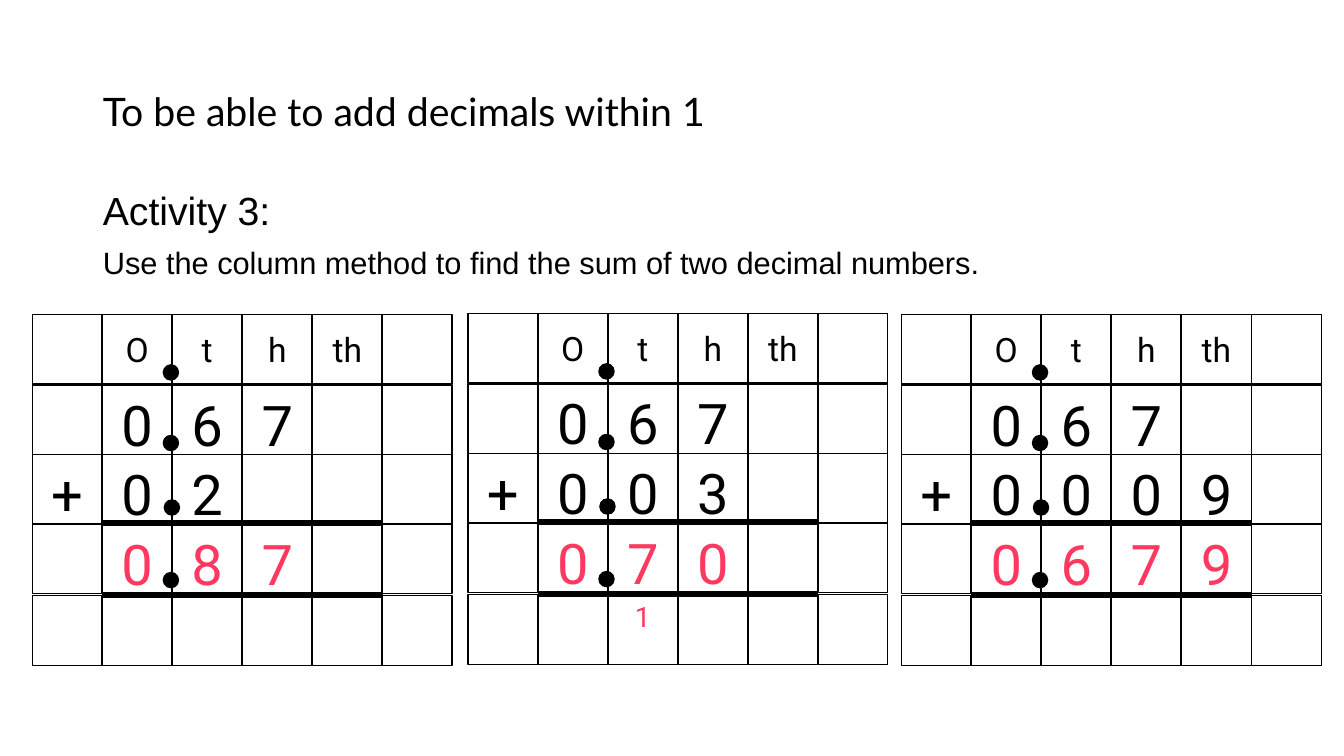
from lxml.etree import SubElement
from pptx import Presentation
from pptx.dml.color import RGBColor
from pptx.enum.shapes import MSO_CONNECTOR, MSO_SHAPE
from pptx.enum.text import MSO_ANCHOR, MSO_AUTO_SIZE, PP_ALIGN
from pptx.oxml.ns import qn
from pptx.util import Inches, Pt

BLACK, WHITE, ANSWER = "000000", "FFFFFF", "FF3860"
CELL = 0.69
COLUMN_STEP = 0.695
ROW_OFFSETS = [0, 0.7, 1.39, 2.08, 2.79]
DOT_OFFSETS = [(1.3, 0.5), (1.3, 1.2), (1.31, 1.84), (1.3, 2.56)]
HEADINGS = ["", "O", "t", "h", "th", ""]

# Left, top, then the rows below the headings, one string per row.
SUMS = [
    (0.32, 3.12, [" 067  ", "+02   ", " 087  ", "      "]),
    (8.94, 3.12, [" 067  ", "+0009 ", " 0679 ", "      "]),
    (4.64, 3.11, [" 067  ", "+003  ", " 070  ", "  1   "]),
]
ROW_STYLES = [(40, BLACK), (40, BLACK), (40, ANSWER), (20, ANSWER)]


def colour(value):
    return RGBColor.from_string(value)


class LessonSlide:
    digit_font = "Roboto"

    def __init__(self, deck):
        self.slide = deck.slides.add_slide(deck.slide_layouts[1])

    def add_text(self, para, text, size, font, shade=BLACK):
        span = para.add_run()
        span.text = text
        span.font.size = Pt(size)
        span.font.name = font
        span.font.color.rgb = colour(shade)

    def place(self, holder, left, top, width, height, anchor):
        holder.left, holder.top = Inches(left), Inches(top)
        holder.width, holder.height = Inches(width), Inches(height)
        frame = holder.text_frame
        frame.auto_size = MSO_AUTO_SIZE.NONE
        frame.word_wrap = True
        frame.vertical_anchor = anchor
        return frame

    def title(self, text):
        frame = self.place(self.slide.shapes.title, 0.92, 0.4, 9.6, 1.45, MSO_ANCHOR.MIDDLE)
        para = frame.paragraphs[0]
        para.alignment = PP_ALIGN.LEFT
        para.line_spacing = 0.9
        self.add_text(para, text, 28, "Lato")

    def body(self, lines):
        frame = self.place(self.slide.placeholders[1], 0.92, 1.85, 11.5, 4.76, MSO_ANCHOR.TOP)
        for index, (text, size) in enumerate(lines):
            para = frame.add_paragraph() if index else frame.paragraphs[0]
            para.line_spacing = 0.9
            para.space_before = Pt(10 if index else 0)
            properties = para._p.get_or_add_pPr()
            properties.set("marL", "0")
            properties.set("indent", "0")
            SubElement(properties, qn("a:buNone"))
            self.add_text(para, text, size, "Arial")

    def shape(self, kind, left, top, size, fill):
        box = self.slide.shapes.add_shape(
            kind, Inches(left), Inches(top), Inches(size), Inches(size))
        box.shadow.inherit = False
        box.fill.solid()
        box.fill.fore_color.rgb = colour(fill)
        box.line.color.rgb = colour(BLACK)
        box.line.width = Pt(1)
        return box

    def cell(self, left, top, text, size, shade, anchor):
        box = self.shape(MSO_SHAPE.RECTANGLE, left, top, CELL, WHITE)
        if text:
            box.text_frame.vertical_anchor = anchor
            para = box.text_frame.paragraphs[0]
            para.alignment = PP_ALIGN.CENTER
            self.add_text(para, text, size, self.digit_font, shade)

    def dot(self, left, top):
        self.shape(MSO_SHAPE.OVAL, left, top, 0.15, BLACK)

    def rule(self, left, right, top):
        line = self.slide.shapes.add_connector(
            MSO_CONNECTOR.STRAIGHT, Inches(left), Inches(top), Inches(right), Inches(top))
        line.line.color.rgb = colour(BLACK)
        line.line.width = Pt(4.5)
        SubElement(line._element.spPr, qn("a:effectLst"))

    def column_sum(self, left, top, rows):
        """Draw one squared grid with its digits, answer rules and decimal points."""
        for column, heading in enumerate(HEADINGS):
            cell_left = left + column * COLUMN_STEP
            self.cell(cell_left, top, heading, 24, BLACK, MSO_ANCHOR.MIDDLE)
            for row, offset, (size, shade) in zip(rows, ROW_OFFSETS[1:], ROW_STYLES):
                self.cell(cell_left, top + offset, row[column].strip(), size, shade,
                          MSO_ANCHOR.TOP)
        for offset in (2.78, 2.07):
            self.rule(left + COLUMN_STEP, left + 5 * COLUMN_STEP, top + offset)
        for across, down in DOT_OFFSETS:
            self.dot(left + across, top + down)


def main():
    deck = Presentation()
    deck.slide_width, deck.slide_height = Inches(13.33), Inches(7.5)
    page = LessonSlide(deck)
    page.title("To be able to add decimals within 1")
    page.body([
        ("Activity 3:", 28),
        ("Use the column method to find the sum of two decimal numbers.", 22),
    ])
    for left, top, rows in SUMS:
        page.column_sum(left, top, rows)
    deck.save("out.pptx")


if __name__ == "__main__":
    main()
